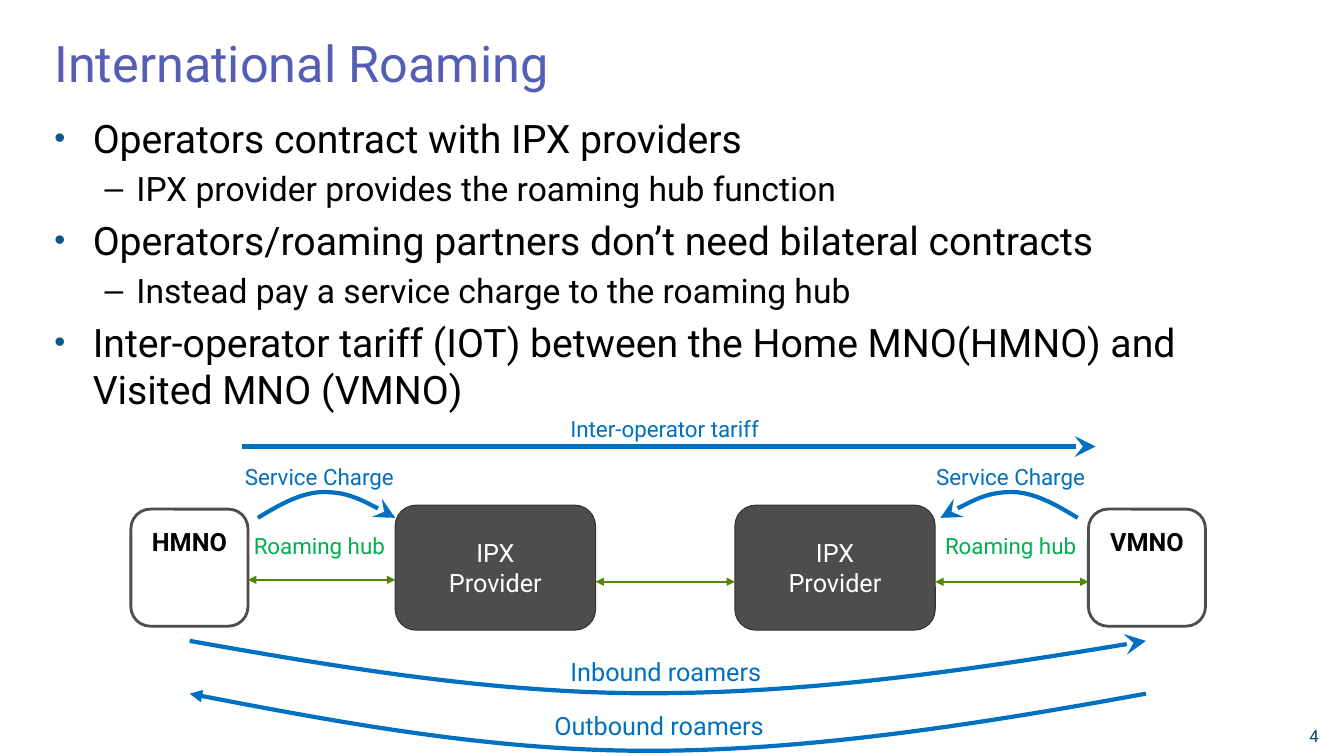
from lxml.etree import SubElement
from pptx import Presentation
from pptx.dml.color import RGBColor
from pptx.enum.shapes import MSO_CONNECTOR, MSO_SHAPE
from pptx.enum.text import MSO_ANCHOR, MSO_AUTO_SIZE, PP_ALIGN
from pptx.oxml.ns import qn
from pptx.util import Cm, Pt

FONT = "Roboto"
BLACK, WHITE = "000000", "FFFFFF"
BLUE, GREEN, ARROW_GREEN, GRAY = "0070C0", "00B050", "508709", "4D4D4D"

POINTS = [
    ("Operators contract with IPX providers", 0),
    ("IPX provider provides the roaming hub function", 1),
    ("Operators/roaming partners don’t need bilateral contracts", 0),
    ("Instead pay a service charge to the roaming hub", 1),
    ("Inter-operator tariff (IOT) between the Home MNO(HMNO) and Visited MNO (VMNO)", 0),
]
LEVELS = [
    dict(size=28, left=0.97, hang=0.97, mark="•", color="0C5986", scale=80000),
    dict(size=24, left=2.07, hang=0.8, mark="–", color=BLACK, scale=100000),
]
BEND = [(0.16, 0.52), (0.32, 1), (0.48, 1), (0.65, 1), (0.83, 0.52), (1, 0)]


def rgb(code):
    """Return the colour for a hex string."""
    return RGBColor.from_string(code)


def style(paragraph, size, color, bold=False, align=PP_ALIGN.CENTER):
    """Set the font and alignment of a paragraph."""
    paragraph.alignment = align
    font = paragraph.font
    font.name, font.size, font.bold = FONT, Pt(size), bold
    font.color.rgb = rgb(color)


def add_title(slide, left, top, width, height):
    """Place and format the slide title."""
    title = slide.shapes.title
    title.left, title.top, title.width, title.height = map(Cm, (left, top, width, height))
    frame = title.text_frame
    frame.text = "International Roaming"
    frame.auto_size = MSO_AUTO_SIZE.NONE
    frame.vertical_anchor = MSO_ANCHOR.MIDDLE
    style(frame.paragraphs[0], 36, "545EB4", align=PP_ALIGN.LEFT)


def add_bullet(paragraph, size, left, hang, mark, color, scale):
    """Give a paragraph its hanging bullet and font."""
    props = paragraph._p.get_or_add_pPr()
    props.set("marL", str(Cm(left)))
    props.set("indent", str(-Cm(hang)))
    SubElement(SubElement(props, qn("a:buClr")), qn("a:srgbClr"), val=color)
    SubElement(props, qn("a:buSzPct"), val=str(scale))
    SubElement(props, qn("a:buFont"), typeface="Arial")
    SubElement(props, qn("a:buChar"), char=mark)
    style(paragraph, size, BLACK, align=PP_ALIGN.LEFT)


def add_points(slide, left, top, width, height):
    """Write the two-level bullet list."""
    frame = slide.shapes.add_textbox(*map(Cm, (left, top, width, height))).text_frame
    frame.word_wrap = True
    for index, (text, level) in enumerate(POINTS):
        paragraph = frame.add_paragraph() if index else frame.paragraphs[0]
        paragraph.text, paragraph.level = text, level
        add_bullet(paragraph, **LEVELS[level])
        if index:
            paragraph.space_before = Pt(0.2 * LEVELS[level]["size"])


def add_label(slide, text, center, middle, size=16, color=BLUE, width=5.6, height=1.42):
    """Write one line centred on a point."""
    box = (center - width / 2, middle - height / 2, width, height)
    frame = slide.shapes.add_textbox(*map(Cm, box)).text_frame
    frame.word_wrap = True
    frame.margin_left = frame.margin_right = 0
    frame.vertical_anchor = MSO_ANCHOR.MIDDLE
    frame.text = text
    style(frame.paragraphs[0], size, color)


def add_node(slide, text, left, top, width, height, fill, edge, weight):
    """Draw a rounded network node with its name."""
    node = slide.shapes.add_shape(MSO_SHAPE.ROUNDED_RECTANGLE,
                                  *map(Cm, (left, top, width, height)))
    node.shadow.inherit = False
    node.fill.solid()
    node.fill.fore_color.rgb = rgb(fill)
    node.line.color.rgb = rgb(edge)
    node.line.width = Pt(weight)
    frame = node.text_frame
    frame.text = text
    frame.word_wrap = False
    is_operator = fill == WHITE
    if is_operator:
        frame.vertical_anchor = MSO_ANCHOR.TOP
        frame.margin_top = Cm(0.28)
    else:
        frame.vertical_anchor = MSO_ANCHOR.MIDDLE
    style(frame.paragraphs[0], 18, BLACK if is_operator else WHITE, bold=is_operator)


def set_stroke(stroke, color, weight, head=None, tail=None):
    """Set line colour, weight and arrowheads."""
    stroke.line.color.rgb = rgb(color)
    stroke.line.width = Pt(weight)
    outline = stroke.element.spPr.find(qn("a:ln"))
    for tag, kind in (("a:headEnd", head), ("a:tailEnd", tail)):
        if kind:
            scale = "lg" if kind == "stealth" else "med"
            SubElement(outline, qn(tag), type=kind, w=scale, len=scale)


def add_arrow(slide, start, end, y, color, weight, **heads):
    """Draw a horizontal arrow."""
    arrow = slide.shapes.add_connector(MSO_CONNECTOR.STRAIGHT, *map(Cm, (start, y, end, y)))
    set_stroke(arrow, color, weight, **heads)
    SubElement(arrow.element.spPr, qn("a:effectLst"))


def add_curve(slide, start, end, y, depth, **heads):
    """Draw a two-part Bezier bow, downwards for positive depth."""
    builder = slide.shapes.build_freeform(Cm(start), Cm(y))
    builder.add_line_segments([(Cm(start + u * (end - start)), Cm(y + v * depth))
                               for u, v in BEND], close=False)
    curve = builder.convert_to_shape()
    curve.shadow.inherit = False
    curve.fill.background()
    set_stroke(curve, BLUE, 3, **heads)
    segments = list(curve.element.iter(qn("a:lnTo")))
    outline = segments[0].getparent()
    for first in range(0, len(segments), 3):
        bezier = SubElement(outline, qn("a:cubicBezTo"))
        for segment in segments[first:first + 3]:
            bezier.append(segment[0])
            outline.remove(segment)


def add_roaming_diagram(slide, left, top):
    """Draw operators, providers and the flows between them."""
    hmno, vmno, operator_side = left, left + 24.13, 2.95
    home_ipx, visited_ipx, ipx_width = left + 6.66, left + 15.22, 5.05
    hmno_right, home_ipx_right = hmno + operator_side, home_ipx + ipx_width
    visited_ipx_right = visited_ipx + ipx_width
    center = left + 13.45

    add_curve(slide, left + 1.48, left + 25.58, top + 6.07, 1.32, tail="stealth")
    add_label(slide, "Inbound roamers", center + 0.03, top + 6.85, 18)
    add_curve(slide, left + 1.48, left + 25.58, top + 7.4, 1.44, head="triangle")
    add_label(slide, "Outbound roamers", center - 0.14, top + 8.21, 18)

    for name, x in (("HMNO", hmno), ("VMNO", vmno)):
        add_node(slide, name, x, top + 2.75, operator_side, operator_side, WHITE, GRAY, 2)
    for x in (home_ipx, visited_ipx):
        add_node(slide, "IPX\vProvider", x, top + 2.65, ipx_width, 3.15, GRAY, "333333", 0.75)

    for start, end, y in ((hmno_right, home_ipx, 4.53),
                          (home_ipx_right, visited_ipx, 4.58),
                          (visited_ipx_right, vmno, 4.58)):
        add_arrow(slide, start, end, top + y, ARROW_GREEN, 1.5, head="triangle", tail="triangle")

    for start, end, middle in ((left + 3.2, home_ipx, left + 4.75),
                               (left + 23.86, left + 20.4, left + 22.17)):
        add_curve(slide, start, end, top + 2.97, -0.65, tail="stealth")
        add_label(slide, "Service Charge", middle, top + 1.92, width=4.01)
        add_label(slide, "Roaming hub", middle, top + 3.66, color=GREEN, width=4.01)

    add_arrow(slide, left + 2.8, left + 24.31, top + 1.17, BLUE, 3, tail="stealth")
    add_label(slide, "Inter-operator tariff", center, top + 0.71)


def main():
    """Build the slide and save it."""
    deck = Presentation()
    deck.slide_width, deck.slide_height = Cm(33.87), Cm(19.05)
    slide = deck.slides.add_slide(deck.slide_layouts[5])
    add_title(slide, 1.12, 0.84, 31.6, 1.47)
    add_points(slide, 1.12, 2.75, 31.6, 14.8)
    add_roaming_diagram(slide, 3.3, 10.08)
    add_label(slide, "4", 33.12, 18.55, 12, "094365", 1.52, 0.84)
    deck.save("out.pptx")


if __name__ == "__main__":
    main()
